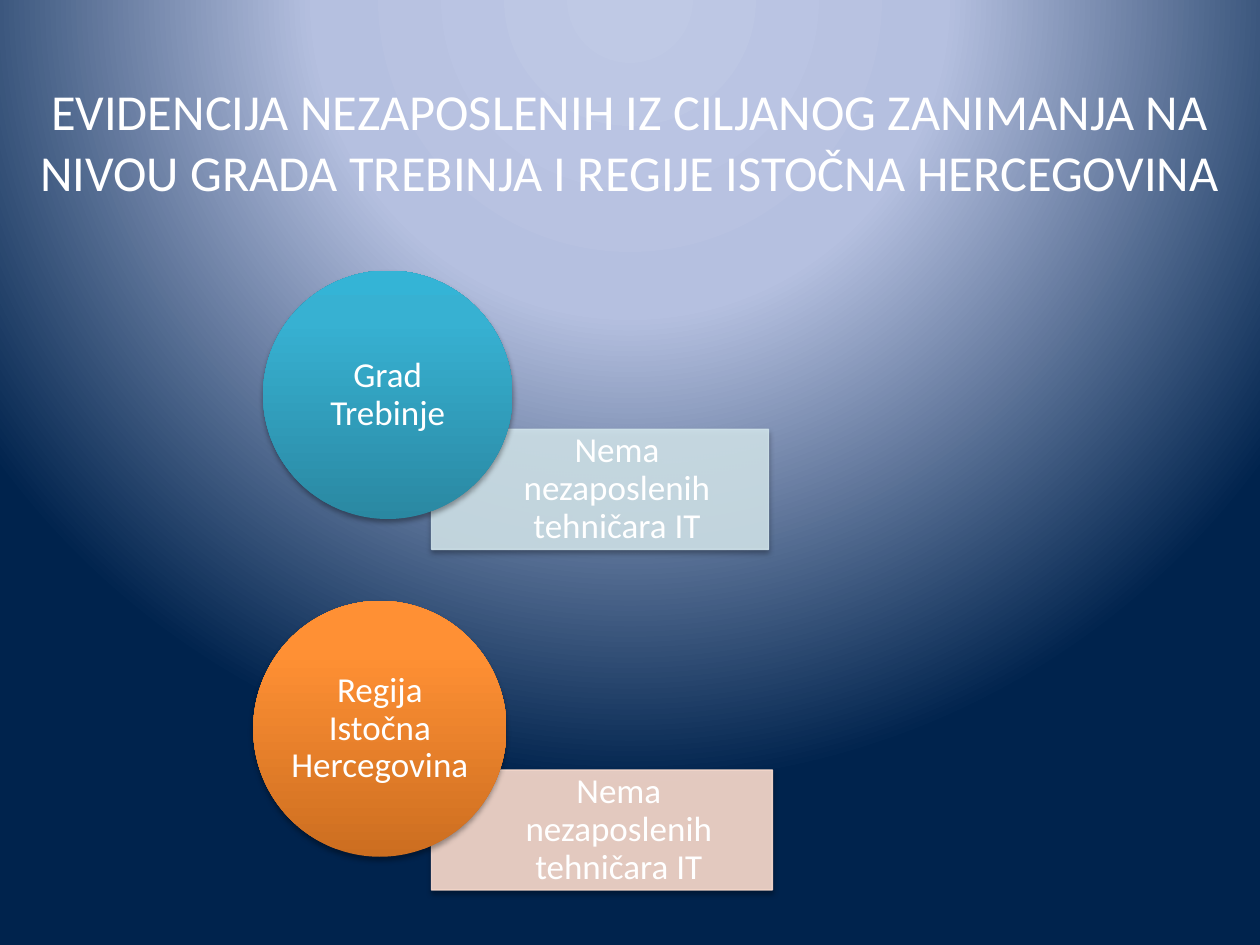
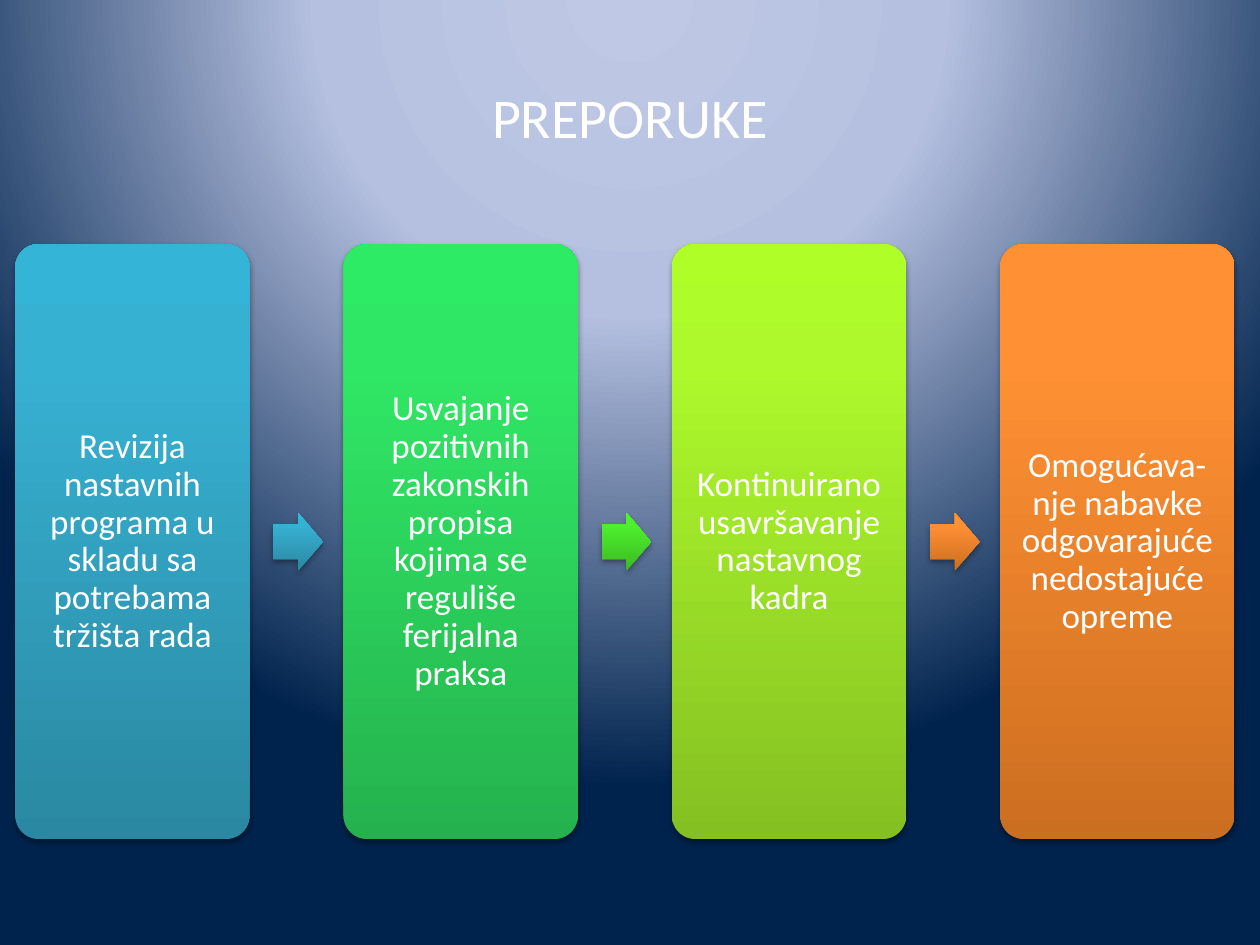
"""Build two slides on unemployment records and recommendations."""
from lxml import etree
from pptx import Presentation
from pptx import dml
from pptx import oxml
from pptx import util as u
from pptx.dml import color
from pptx.enum import shapes, text
from pptx.oxml import ns

Pt = u.Pt
FONT = "Calibri"
WHITE = "FFFFFF"
BLUE = ("2A88A2", "37B1D2", "34B4D6")
EMERALD = ("25B24E", "30E765", "2DEB64")
GREEN = ("3CB923", "4EF02E", "4CF52A")
LIME = ("85C022", "ADF92C", "AFFE28")
ORANGE = ("CC6E20", "FF9034", "FF9136")
BACKDROP = ("BFC9E5", "B5C0E0", "00234D")
SHADOW = (
    f'<a:outerShdw {ns.nsdecls("a")} blurRad="40000" dist="23000" dir="5400000" rotWithShape="0">'
    '<a:srgbClr val="000000"><a:alpha val="35000"/></a:srgbClr></a:outerShdw>'
)


def paint(properties, colors, middle, direction):
    """Replace the solid fill by a gradient of three colours."""
    stops = "".join(
        f'<a:gs pos="{position * 1000}"><a:srgbClr val="{value}"/></a:gs>'
        for position, value in zip((0, middle, 100), colors)
    )
    gradient = oxml.parse_xml(
        f'<a:gradFill {ns.nsdecls("a")} rotWithShape="1"><a:gsLst>{stops}</a:gsLst>{direction}</a:gradFill>'
    )
    properties.replace(properties.find(ns.qn("a:solidFill")), gradient)


def add_block(slide, kind, box, colors, words="", insets=(0, 0, 0, 0)):
    """Add a shadowed shape with a gradient or a translucent fill, and its text."""
    shape = slide.shapes.add_shape(kind, *(Pt(length) for length in box))
    properties = shape.element.spPr
    shape.fill.solid()
    if isinstance(colors, tuple):
        shape.line.fill.background()
        paint(properties, colors, 80, '<a:lin ang="16200000" scaled="0"/>')
    else:
        shape.fill.fore_color.rgb = color.RGBColor.from_string(colors)
        shape.line.color.rgb = color.RGBColor.from_string(colors)
        shape.line.width = Pt(0.75)
        for tint in properties.iter(ns.qn("a:srgbClr")):
            etree.SubElement(tint, ns.qn("a:alpha")).set("val", "90000")
    shape.shadow.inherit = False
    properties.find(ns.qn("a:effectLst")).append(oxml.parse_xml(SHADOW))
    if words:
        frame = shape.text_frame
        frame.word_wrap = True
        frame.vertical_anchor = text.MSO_ANCHOR.MIDDLE
        frame.margin_left, frame.margin_top, frame.margin_right, frame.margin_bottom = map(Pt, insets)
        paragraph = frame.paragraphs[0]
        paragraph.alignment = text.PP_ALIGN.CENTER
        paragraph.line_spacing = 0.9
        run = paragraph.add_run()
        run.text = words
        run.font.name = FONT
        run.font.size = Pt(20)
        run.font.color.rgb = color.RGBColor.from_string(WHITE)
    return shape


presentation = Presentation()
presentation.slide_width, presentation.slide_height = Pt(720), Pt(540)
master = presentation.slide_master
master.background.fill.solid()
paint(
    master.element.find(".//" + ns.qn("p:bgPr")), BACKDROP, 40,
    '<a:path path="circle"><a:fillToRect l="50000" t="-80000" r="50000" b="180000"/></a:path>',
)

titles = [
    ("EVIDENCIJA NEZAPOSLENIH IZ CILJANOG ZANIMANJA NA NIVOU GRADA TREBINJA I REGIJE ISTOČNA HERCEGOVINA",
     (0, 21.6, 720, 118), 28.8),
    ("PREPORUKE", (36, 21.6, 648, 90), 32),
]
slides = []
for words, box, size in titles:
    slide = presentation.slides.add_slide(presentation.slide_layouts[5])
    title = slide.shapes.title
    title.left, title.top, title.width, title.height = map(Pt, box)
    frame = title.text_frame
    frame.auto_size = text.MSO_AUTO_SIZE.NONE
    frame.vertical_anchor = text.MSO_ANCHOR.MIDDLE
    paragraph = frame.paragraphs[0]
    paragraph.alignment = text.PP_ALIGN.CENTER
    run = paragraph.add_run()
    run.text = words
    run.font.name = FONT
    run.font.size = Pt(size)
    run.font.color.rgb = color.RGBColor.from_string(WHITE)
    slides.append(slide)
records_slide, advice_slide = slides

records = [
    ("Grad Trebinje", (150.3, 154.6, 142.6, 142), BLUE, (246.6, 245.4, 192.6, 68.6), "D0E3EA"),
    ("Regija Istočna Hercegovina", (144.7, 343.4, 144.7, 146.2), ORANGE, (246.6, 440, 194.8, 68.6), "FCDDCF"),
]
for region, circle_box, circle_colors, result_box, result_color in records:
    add_block(records_slide, shapes.MSO_SHAPE.RECTANGLE, result_box, result_color,
              "Nema nezaposlenih tehničara IT", (30.8, 11.5, 11.5, 11.5))
    add_block(records_slide, shapes.MSO_SHAPE.OVAL, circle_box, circle_colors, region)

steps = [
    ("Revizija nastavnih programa u skladu sa potrebama tržišta rada", BLUE, BLUE),
    ("Usvajanje pozitivnih zakonskih propisa kojima se reguliše ferijalna praksa", EMERALD, GREEN),
    ("Kontinuirano usavršavanje nastavnog kadra", LIME, ORANGE),
    ("Omogućava-nje nabavke odgovarajuće nedostajuće opreme", ORANGE, None),
]
for index, (words, card_colors, arrow_colors) in enumerate(steps):
    left = 8.7 + index * 187.6
    card = add_block(advice_slide, shapes.MSO_SHAPE.ROUNDED_RECTANGLE, (left, 139.5, 134, 340),
                     card_colors, words, (5.8, 5.8, 5.8, 5.8))
    card.adjustments[0] = 0.1
    if arrow_colors:
        arrow = add_block(advice_slide, shapes.MSO_SHAPE.RIGHT_ARROW, (left + 147.5, 293, 28.4, 33.2), arrow_colors)
        arrow.adjustments[0], arrow.adjustments[1] = 0.6, 0.5

presentation.save("out.pptx")
